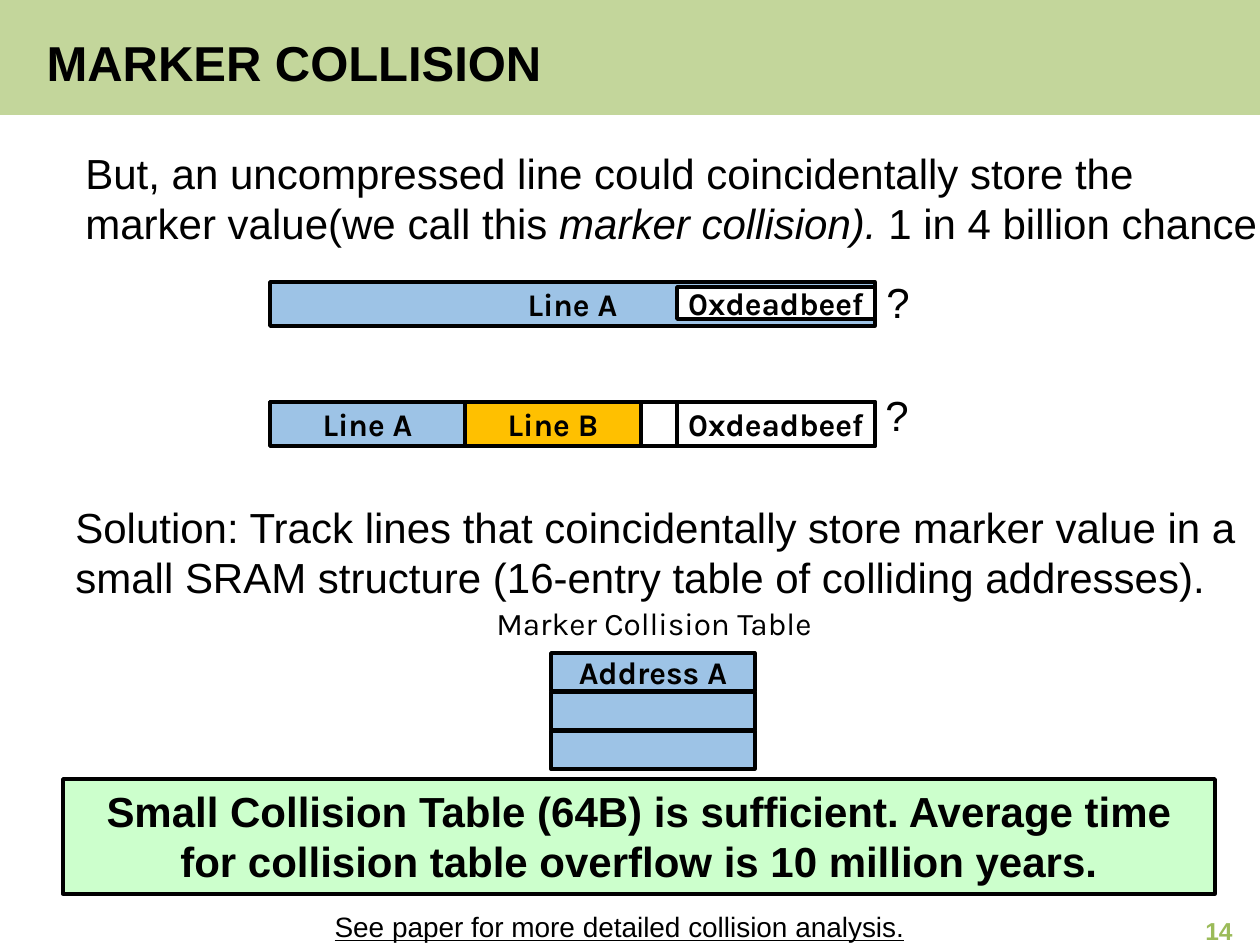
from pptx import Presentation
from pptx.dml.color import RGBColor
from pptx.enum.shapes import MSO_SHAPE as SHAPE
from pptx.enum.text import MSO_ANCHOR as ANCHOR, PP_ALIGN as ALIGN
from pptx.util import Emu, Pt

PX_PER_INCH = 126
COLORS = {
    "black": "000000", "white": "FFFFFF", "band": "C3D69B", "page": "9BBB59",
    "blue": "9DC3E6", "amber": "FFC000", "mint": "CCFFCC",
}


def px(n):
    return Emu(round(n * 914400 / PX_PER_INCH))


def rgb(name):
    return RGBColor.from_string(COLORS[name])


class SlideBuilder:
    body_font = "Arial"
    diagram_font = "Karla"
    line_width = Pt(2)

    def __init__(self, prs):
        self.slide = prs.slides.add_slide(prs.slide_layouts[5])
        self.shapes = self.slide.shapes

    def set_text(self, sp, runs, size, font=None, color="black", bold=False,
                 underline=None, align=ALIGN.LEFT, anchor=ANCHOR.TOP, wrap=True):
        """Fill a shape with one paragraph; runs is a list of (text, italic)."""
        tf = sp.text_frame
        tf.word_wrap = wrap
        tf.vertical_anchor = anchor
        p = tf.paragraphs[0]
        p.alignment = align
        for text, italic in runs:
            r = p.add_run()
            r.text = text
            r.font.name = font or self.body_font
            r.font.size = Pt(size)
            r.font.bold = bold
            r.font.italic = italic
            r.font.underline = underline
            r.font.color.rgb = rgb(color)
        return p

    def title(self, text, x, y, w, h):
        sp = self.slide.shapes.title
        sp.left, sp.top, sp.width, sp.height = map(px, (x, y, w, h))
        self.set_text(sp, [(text, False)], 28, bold=True, anchor=ANCHOR.MIDDLE)

    def text(self, runs, x, y, w, h, size=24, **style):
        sp = self.shapes.add_textbox(*map(px, (x, y, w, h)))
        if isinstance(runs, str):
            runs = [(runs, False)]
        return self.set_text(sp, runs, size, **style)

    def rect(self, x, y, w, h, fill, outlined=True):
        sp = self.shapes.add_shape(SHAPE.RECTANGLE, *map(px, (x, y, w, h)))
        sp.shadow.inherit = False
        sp.fill.solid()
        sp.fill.fore_color.rgb = rgb(fill)
        if outlined:
            sp.line.color.rgb = rgb("black")
            sp.line.width = self.line_width
        else:
            sp.line.fill.background()
        return sp

    def cell(self, label, x, y, w, h, fill):
        """Draw a block of a memory line with a centred label."""
        sp = self.rect(x, y, w, h, fill)
        tf = sp.text_frame
        tf.margin_left = tf.margin_right = 0
        if label:
            self.set_text(sp, [(label, False)], 18, font=self.diagram_font,
                          bold=True, align=ALIGN.CENTER, anchor=ANCHOR.MIDDLE)

    def callout(self, text, x, y, w, h, fill):
        sp = self.rect(x, y, w, h, fill)
        self.set_text(sp, [(text, False)], 24, bold=True, align=ALIGN.CENTER)

    def collision_table(self, caption, entries, x, y, w, h, pitch):
        self.shapes = self.slide.shapes.add_group_shape().shapes
        p = self.text(caption, 369, 602, 570, 47, size=18,
                      font=self.diagram_font, align=ALIGN.CENTER,
                      anchor=ANCHOR.MIDDLE)
        p.line_spacing = 0.9
        for i, entry in enumerate(entries):
            self.cell(entry, x, y + i * pitch, w, h, "blue")
        self.shapes = self.slide.shapes


def main():
    prs = Presentation()
    prs.slide_width, prs.slide_height = px(1260), px(945)
    s = SlideBuilder(prs)

    band = s.rect(0, 0, 1260, 115, "band", outlined=False)
    s.slide.shapes.title.element.addprevious(band.element)
    s.title("MARKER COLLISION", 34, 28, 1155, 67)
    s.text("14", 951, 914, 294, 33, size=14, color="page", bold=True,
           align=ALIGN.RIGHT, anchor=ANCHOR.MIDDLE)

    line_x, line_w, line_h = 270, 605, 44
    marker_x, marker_w = 677, 198
    plain_y, packed_y = 282, 402
    marker = "0xdeadbeef"

    s.rect(line_x, packed_y, line_w, line_h, "white")
    s.cell("Line A", line_x, packed_y, 195, line_h, "blue")
    s.cell("Line B", line_x + 195, packed_y, 176, line_h, "amber")
    s.cell(marker, marker_x, packed_y, marker_w, line_h, "white")

    s.cell("Line A", line_x, plain_y, line_w, line_h, "blue")
    s.cell(marker, marker_x, plain_y + 5, marker_w, 32, "white")

    s.text([("But, an uncompressed line could coincidentally store the marker "
             "value(we call this ", False),
            ("marker collision). ", True),
            ("1 in 4 billion chance", False)], 73, 141, 1211, 115)
    for x, y in ((874, 270), (873, 383)):
        s.text("?", x, y, 49, 63, wrap=False)
    s.text("Solution: Track lines that coincidentally store marker value in a "
           "small SRAM structure (16-entry table of colliding addresses).",
           63, 495, 1197, 115)
    s.text("See paper for more detailed collision analysis.",
           81, 903, 1077, 47, size=16, underline=True, align=ALIGN.CENTER)
    s.callout("Small Collision Table (64B) is sufficient. Average time for "
              "collision table overflow is 10 million years.",
              63, 779, 1152, 115, "mint")
    s.collision_table("Marker Collision Table", ["Address A", "", ""],
                      551, 653, 204, 38, pitch=39)

    prs.save("out.pptx")


if __name__ == "__main__":
    main()
